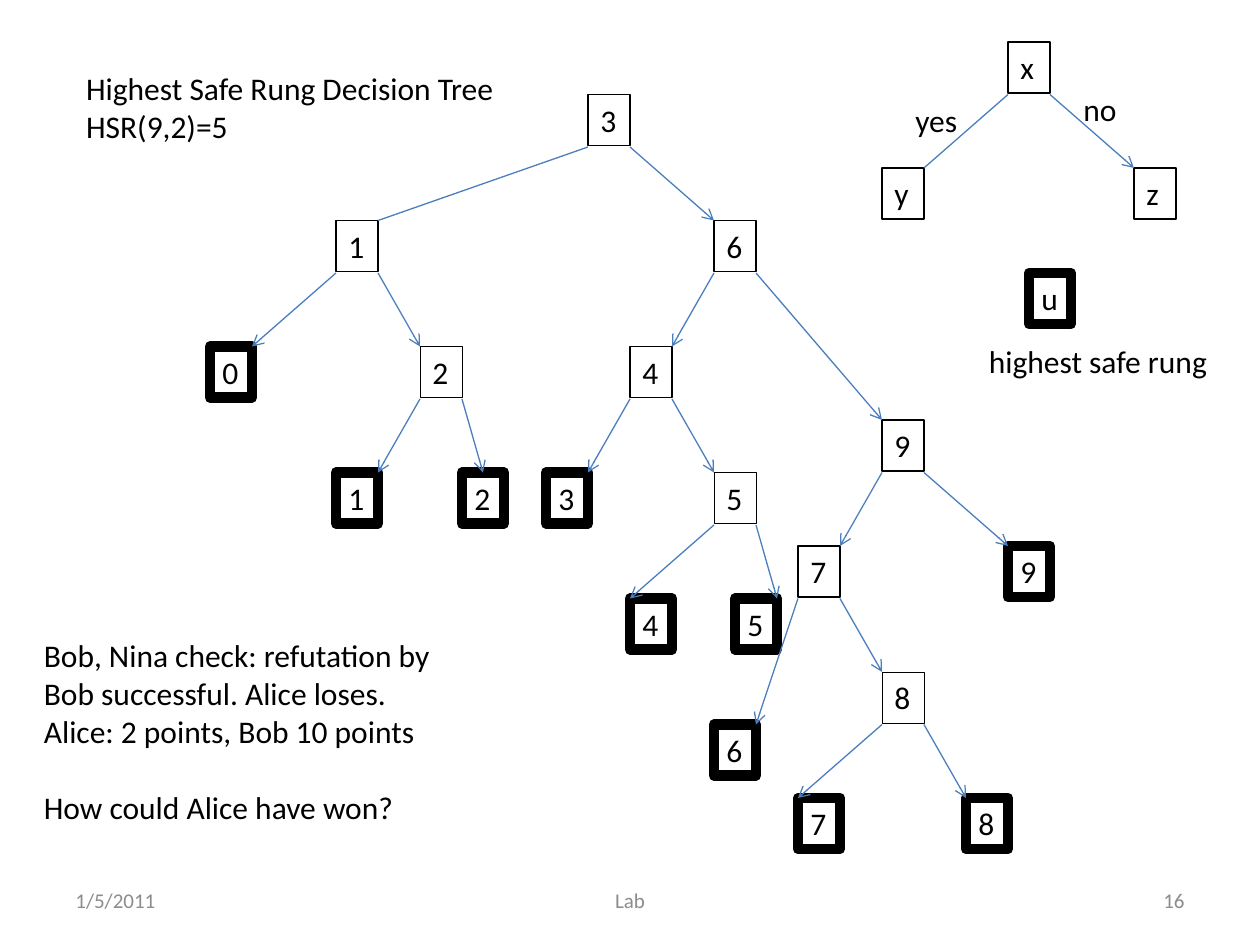
"""Build the slide with the highest safe rung decision tree."""
import pptx
import pptx.dml.color
import pptx.enum.shapes
import pptx.enum.text
import pptx.util
import lxml.etree
from dataclasses import dataclass

Rgb = pptx.dml.color.RGBColor
Align = pptx.enum.text.PP_ALIGN
Anchor = pptx.enum.text.MSO_ANCHOR
Auto = pptx.enum.text.MSO_AUTO_SIZE
Pt = pptx.util.Pt
SCALE = 9525
WIDE, TALL, DROP = 32, 39, 40


@dataclass
class Theme:
    font: str = "Calibri"
    ink: Rgb = Rgb(0, 0, 0)
    gray: Rgb = Rgb(0x8C, 0x8C, 0x8C)
    edge: Rgb = Rgb(0x4B, 0x7E, 0xBC)
    text: int = 18
    small: int = 12
    hair: float = 0.25
    thin: float = 0.75
    thick: float = 6


theme = Theme()


def px(*nums):
    return [pptx.util.Emu(num * SCALE) for num in nums]


def write(shape, text, size=theme.text, ink=theme.ink, align=Align.LEFT,
          anchor=Anchor.TOP, wrap=False):
    frame = shape.text_frame
    frame.text = text
    frame.word_wrap = wrap
    frame.auto_size = Auto.NONE if wrap else Auto.SHAPE_TO_FIT_TEXT
    frame.vertical_anchor = anchor
    for para in frame.paragraphs:
        para.alignment = align
        para.font.name = theme.font
        para.font.size = Pt(size)
        para.font.color.rgb = ink
    return frame


deck = pptx.Presentation()
deck.slide_width, deck.slide_height = px(960, 720)
slide = deck.slides.add_slide(deck.slide_layouts[5])
shapes = slide.shapes

title = shapes.title
title.left, title.top, title.width, title.height = px(56, 48, 377, 68)
write(title, "Highest Safe Rung Decision Tree\nHSR(9,2)=5")

# Names in brackets are leaves.
spots = {
    "3": (448, 72), "1": (256, 168), "6": (544, 168),
    "[0]": (160, 264), "2": (320, 264), "4": (480, 264),
    "[1]": (256, 360), "[2]": (352, 360), "[3]": (416, 360), "5": (544, 360),
    "[4]": (480, 456), "[5]": (560, 456),
    "9": (672, 320), "7": (608, 416), "[9]": (768, 416),
    "[6]": (544, 552), "8": (672, 512), "[7]": (608, 608), "[8]": (736, 608),
    "x": (768, 32), "y": (672, 128), "z": (864, 128), "[u]": (784, 208),
}
nodes = {}
for name, (left, top) in spots.items():
    node = shapes.add_shape(pptx.enum.shapes.MSO_SHAPE.RECTANGLE,
                            *px(left, top, WIDE, TALL))
    node.shadow.inherit = False
    node.fill.background()
    node.line.color.rgb = theme.ink
    width = theme.thick if "[" in name else theme.hair if name in "258" else theme.thin
    node.line.width = Pt(width)
    write(node, name.strip("[]"))
    nodes[name] = node

tree = {
    "3": ("1", "6"), "1": ("[0]", "2"), "6": ("4", "9"),
    "2": ("[1]", "[2]"), "4": ("[3]", "5"), "5": ("[4]", "[5]"),
    "9": ("7", "[9]"), "7": ("[6]", "8"), "8": ("[7]", "[8]"),
    "x": ("y", "z"),
}
ends = {"[4]": 0, "[5]": WIDE, "[7]": 0}
plain = ("1", "y")
for root, kids in tree.items():
    for kid, start, end in zip(kids, (0, WIDE), (WIDE, 0)):
        left, top = spots[root]
        goal, base = spots[kid]
        line = shapes.add_connector(
            pptx.enum.shapes.MSO_CONNECTOR.STRAIGHT,
            *px(left + start, top + DROP, goal + ends.get(kid, end), base))
        if kid == "[2]":
            line.end_connect(nodes[kid], 0)
        line.line.color.rgb = theme.edge
        line.line.width = Pt(theme.thin)
        if kid not in plain:
            tail = lxml.etree.SubElement(line.line._get_or_add_ln(),
                                         pptx.oxml.ns.qn("a:tailEnd"))
            tail.set("type", "arrow")
        lxml.etree.SubElement(line._element.spPr, pptx.oxml.ns.qn("a:effectLst"))

labels = [
    ("yes", 688, 72, 57), ("no", 816, 64, 46),
    ("highest safe rung", 744, 256, 205),
]
for text, left, top, width in labels:
    write(shapes.add_textbox(*px(left, top, width, TALL)), text)

story = write(shapes.add_textbox(*px(24, 480, 323, 155)),
              "Bob, Nina check: refutation by\nBob successful. Alice loses.\n"
              "Alice: 2 points, Bob 10 points\nHow could Alice have won?")
story.paragraphs[-1].space_before = Pt(22)

feet = [
    ("1/5/2011", 48, 224, Align.LEFT),
    ("Lab", 328, 304, Align.CENTER),
    ("16", 688, 224, Align.RIGHT),
]
for text, left, width, align in feet:
    write(shapes.add_textbox(*px(left, 667, width, 38)), text, theme.small,
          theme.gray, align, Anchor.MIDDLE, True)

deck.save("out.pptx")
